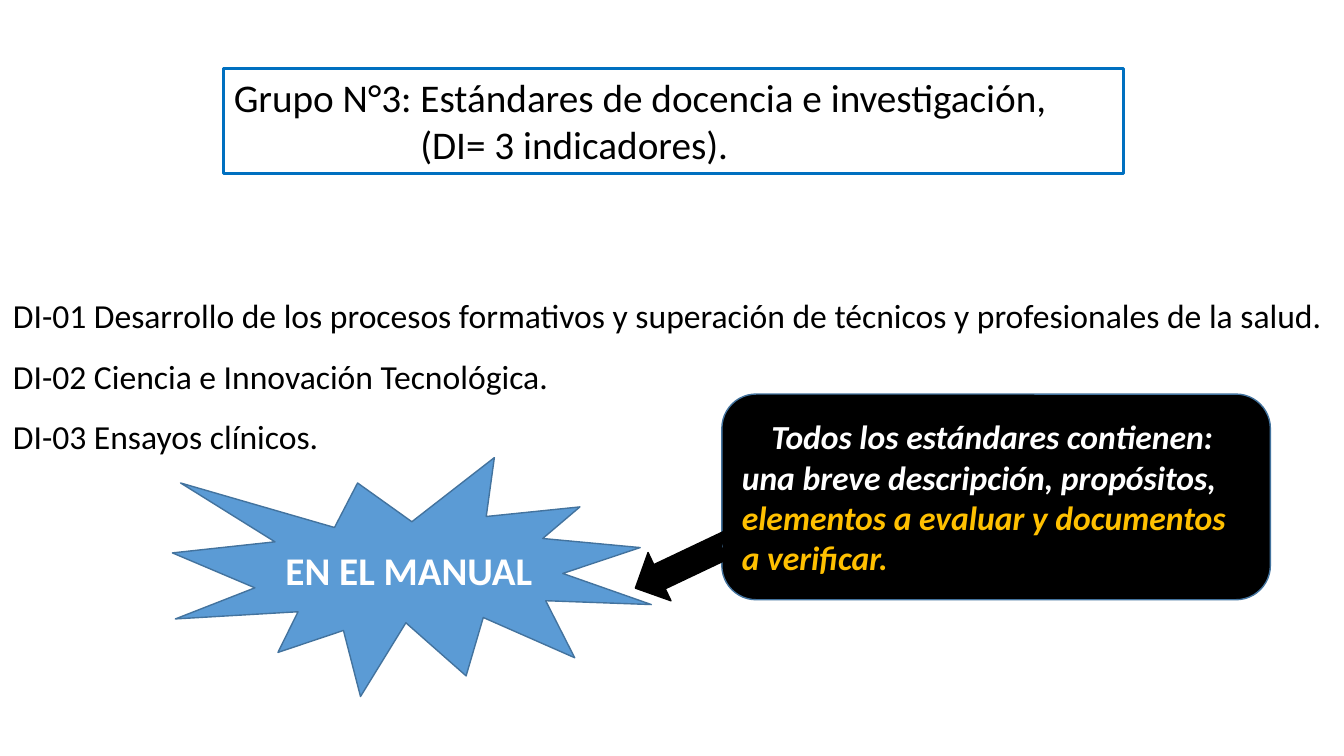
from dataclasses import dataclass
from typing import Optional

from pptx import Presentation
from pptx import util as u
from pptx.dml.color import RGBColor
from pptx.enum import shapes, text

EMU_PER_PX = 9144  # 100 px to the inch


@dataclass(frozen=True)
class Theme:
    font: str = "Calibri"
    heading_size: int = 28
    body_size: int = 24
    black: str = "000000"
    white: str = "FFFFFF"
    amber: str = "FFC000"
    blue: str = "5B9BD5"
    blue_edge: str = "43739E"
    frame: str = "0070C0"


THEME = Theme()
SHAPE = shapes.MSO_SHAPE
ALIGN = text.PP_ALIGN


@dataclass(frozen=True)
class Run:
    words: str
    color: str = THEME.black


@dataclass(frozen=True)
class Line:
    runs: tuple[Run, ...]
    align: ALIGN = ALIGN.LEFT
    indent: int = 0


@dataclass(frozen=True)
class Box:
    left: int
    top: int
    width: int
    height: int
    kind: Optional[SHAPE] = None  # None is a plain text box
    fill: Optional[str] = None
    edge: Optional[str] = None
    edge_width: float = 1
    rotation: float = 0
    lines: tuple[Line, ...] = ()
    size: int = THEME.body_size
    bold: bool = False
    italic: bool = False
    spacing: float = 1
    anchor: text.MSO_ANCHOR = text.MSO_ANCHOR.MIDDLE
    wrap: bool = True
    grow: bool = False


def px(value: int) -> u.Emu:
    return u.Emu(value * EMU_PER_PX)


def rgb(color: str) -> RGBColor:
    return RGBColor.from_string(color)


def paint(shape, box: Box) -> None:
    shape.shadow.inherit = False
    shape.rotation = box.rotation
    if box.fill:
        shape.fill.solid()
        shape.fill.fore_color.rgb = rgb(box.fill)
    else:
        shape.fill.background()
    shape.line.color.rgb = rgb(box.edge)
    shape.line.width = u.Pt(box.edge_width)


def write(frame, box: Box) -> None:
    frame.word_wrap = box.wrap
    frame.vertical_anchor = box.anchor
    if box.grow:
        frame.auto_size = text.MSO_AUTO_SIZE.SHAPE_TO_FIT_TEXT
    for index, line in enumerate(box.lines):
        paragraph = frame.add_paragraph() if index else frame.paragraphs[0]
        paragraph.alignment = line.align
        paragraph.line_spacing = box.spacing
        if line.indent:
            properties = paragraph._p.get_or_add_pPr()
            properties.set("marL", "0")
            properties.set("indent", str(px(line.indent)))
        font = paragraph.font
        font.name, font.size = THEME.font, u.Pt(box.size)
        font.bold, font.italic = box.bold, box.italic
        colors = {part.color for part in line.runs}
        if len(colors) == 1:
            font.color.rgb = rgb(line.runs[0].color)
        for part in line.runs:
            run = paragraph.add_run()
            run.text = part.words
            if len(colors) > 1:
                run.font.color.rgb = rgb(part.color)


def draw(slide, box: Box) -> None:
    place = [px(value) for value in (box.left, box.top, box.width, box.height)]
    if box.kind is None:
        shape = slide.shapes.add_textbox(*place)
    else:
        shape = slide.shapes.add_shape(box.kind, *place)
        paint(shape, box)
    if box.lines:
        write(shape.text_frame, box)


# Framed heading
HEADING = Box(
    222, 68, 892, 104, SHAPE.RECTANGLE, edge=THEME.frame, edge_width=2.25,
    size=THEME.heading_size, anchor=text.MSO_ANCHOR.TOP, grow=True,
    lines=(
        Line((Run("Grupo N°3: Estándares de docencia e investigación,"),)),
        Line((Run("(DI= 3 indicadores)."),), indent=185),
    ),
)

# List of indicators
INDICATORS = Box(
    3, 268, 1330, 192, spacing=1.5, anchor=text.MSO_ANCHOR.TOP, wrap=False, grow=True,
    lines=tuple(Line((Run(words),)) for words in (
        "DI-01 Desarrollo de los procesos formativos y superación de técnicos"
        " y profesionales de la salud.",
        "DI-02 Ciencia e Innovación Tecnológica.",
        "DI-03 Ensayos clínicos.",
    )),
)

# Contents of every standard, pointing to the manual
CONTENTS = Box(
    716, 391, 544, 204, SHAPE.ROUNDED_RECTANGLE, THEME.black, THEME.blue_edge,
    bold=True, italic=True,
    lines=(
        Line((Run("Todos los estándares contienen: ", THEME.white),), ALIGN.CENTER),
        Line((
            Run("una breve descripción, propósitos, ", THEME.white),
            Run("elementos a evaluar y documentos a verificar.", THEME.amber),
        )),
    ),
)
ARROW = Box(
    625, 534, 107, 53, SHAPE.NOTCHED_RIGHT_ARROW, THEME.black, THEME.black, rotation=154.6,
)
MANUAL = Box(
    171, 454, 475, 237, SHAPE.EXPLOSION1, THEME.blue, THEME.blue_edge,
    size=THEME.heading_size, bold=True,
    lines=(Line((Run("EN EL MANUAL", THEME.white),), ALIGN.CENTER),),
)


def main() -> None:
    presentation = Presentation()
    presentation.slide_width, presentation.slide_height = px(1333), px(750)
    slide = presentation.slides.add_slide(presentation.slide_layouts[6])
    for box in (HEADING, INDICATORS, CONTENTS, ARROW, MANUAL):
        draw(slide, box)
    presentation.save("out.pptx")


if __name__ == "__main__":
    main()
